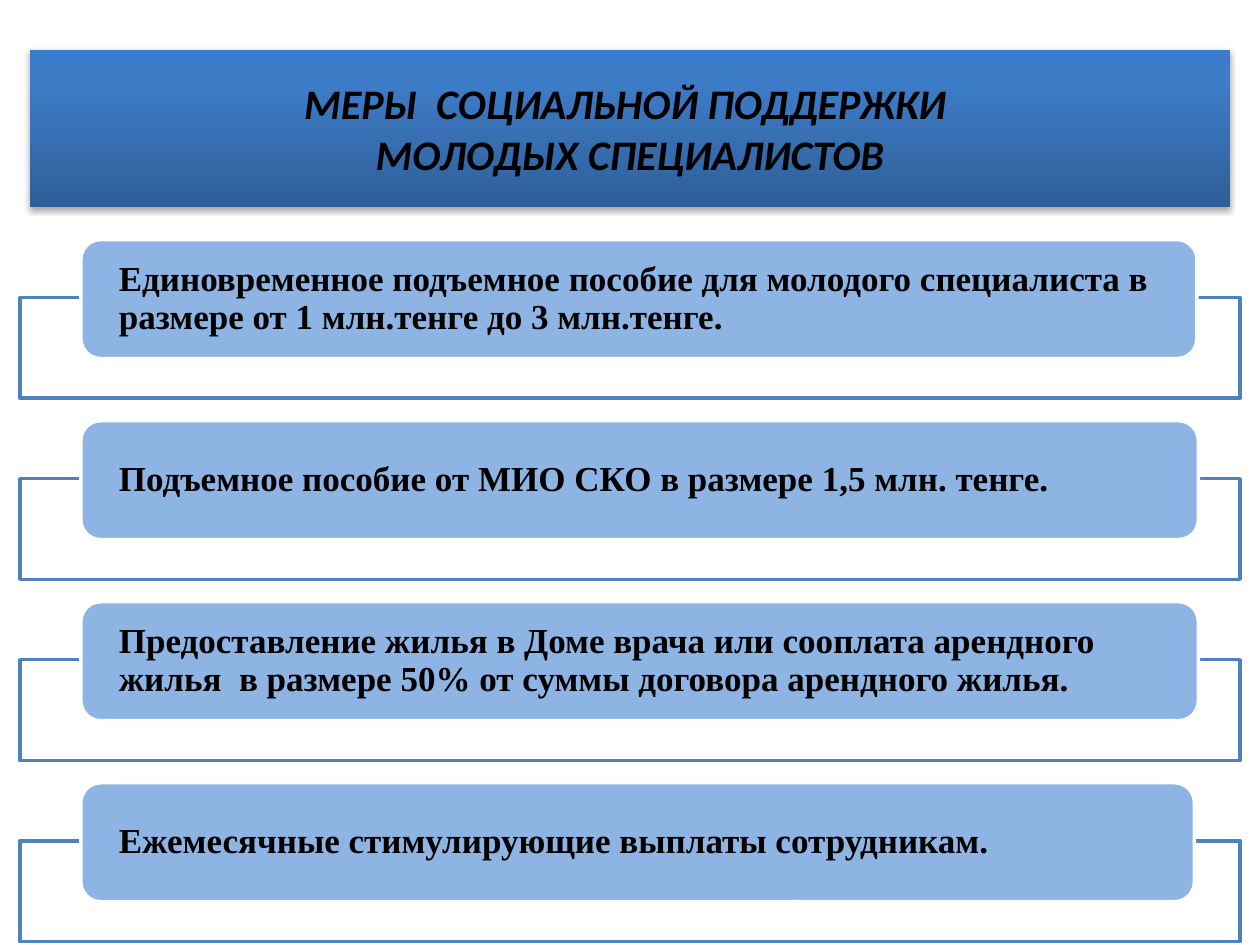
from lxml import etree
from pptx import Presentation
from pptx.dml.color import RGBColor
from pptx.enum.shapes import MSO_SHAPE
from pptx.enum.text import MSO_ANCHOR, PP_ALIGN
from pptx.oxml.ns import qn
from pptx.util import Cm, Pt

RECT, ROUND = MSO_SHAPE.RECTANGLE, MSO_SHAPE.ROUNDED_RECTANGLE
MIDDLE = MSO_ANCHOR.MIDDLE
LEFT, CENTER = PP_ALIGN.LEFT, PP_ALIGN.CENTER

COLORS = {"text": "000000", "white": "FFFFFF", "frame": "4F81BD",
          "card": "8EB4E3", "shadow": "000000"}
BANNER_STOPS = [(0, "2F5F99"), (80, "3D7CC7"), (100, "3A7CCB")]

TITLE = ["МЕРЫ  СОЦИАЛЬНОЙ ПОДДЕРЖКИ ", "МОЛОДЫХ СПЕЦИАЛИСТОВ"]
MEASURES = [
    ("Единовременное подъемное пособие для молодого специалиста "
     "в размере от 1 млн.тенге до 3 млн.тенге.", 22.5),
    ("Подъемное пособие от МИО СКО в размере 1,5 млн. тенге.", 22.53),
    ("Предоставление жилья в Доме врача или сооплата арендного "
     "жилья  в размере 50% от суммы договора арендного жилья.", 22.53),
    ("Ежемесячные стимулирующие выплаты сотрудникам.", 22.45),
]
FIRST_TOP, PITCH, FRAME_DROP = 4.83, 3.65, 1.17


def rgb(name):
    return RGBColor.from_string(COLORS[name])


def add_color(parent, value, alpha=None):
    color = etree.SubElement(parent, qn("a:srgbClr"), val=value)
    if alpha is not None:
        etree.SubElement(color, qn("a:alpha"), val=str(alpha * 1000))


def add_box(shapes, kind, x, y, w, h, fill=None, line=None):
    sp = shapes.add_shape(kind, Cm(x), Cm(y), Cm(w), Cm(h))
    sp.shadow.inherit = False
    if fill:
        sp.fill.solid()
        sp.fill.fore_color.rgb = rgb(fill)
    if line:
        sp.line.color.rgb = rgb(line)
        sp.line.width = Pt(2)
    else:
        sp.line.fill.background()
    return sp


def set_text(sp, lines, size=20, font="Times New Roman", italic=False,
             align=LEFT, spacing=None, inset=None):
    tf = sp.text_frame
    tf.word_wrap = True
    tf.vertical_anchor = MIDDLE
    if inset is not None:
        tf.margin_left = tf.margin_right = Cm(inset)
        tf.margin_top = tf.margin_bottom = 0
    for i, line in enumerate(lines):
        p = tf.paragraphs[0] if i == 0 else tf.add_paragraph()
        p.alignment = align
        p.line_spacing = spacing
        r = p.add_run()
        r.text = line
        r.font.size = Pt(size)
        r.font.name = font
        r.font.bold = True
        r.font.italic = italic
        r.font.color.rgb = rgb("text")


def add_banner(shapes):
    sp = add_box(shapes, RECT, 0.6, 1, 24.2, 3.17)
    sp.fill.gradient()
    sp.fill.gradient_angle = 90
    stops = sp.element.spPr.find(".//" + qn("a:gsLst"))
    for stop in list(stops):
        stops.remove(stop)
    for position, value in BANNER_STOPS:
        add_color(etree.SubElement(stops, qn("a:gs"), pos=str(position * 1000)), value)
    effects = sp.element.spPr.find(qn("a:effectLst"))
    shadow = etree.SubElement(effects, qn("a:outerShdw"), blurRad=str(Pt(3.1)),
                              dist=str(Pt(1.8)), dir="5400000", rotWithShape="0")
    add_color(shadow, COLORS["shadow"], alpha=35)
    set_text(sp, TITLE, size=24, font="Calibri", italic=True, align=CENTER)


def add_measure(shapes, top, text, width):
    frame = add_box(shapes, RECT, 0.4, top + FRAME_DROP, 24.6, 2.03, "white", "frame")
    color = frame.element.spPr.find(qn("a:solidFill")).find(qn("a:srgbClr"))
    etree.SubElement(color, qn("a:alpha"), val="90000")
    card = add_box(shapes, ROUND, 1.63, top, width, 2.4, "card", "white")
    set_text(card, [text], spacing=0.9, inset=0.65)


def main():
    prs = Presentation()
    prs.slide_width, prs.slide_height = Cm(25.4), Cm(19.05)
    s = prs.slides.add_slide(prs.slide_layouts[6])
    add_banner(s.shapes)
    group = s.shapes.add_group_shape()
    for i, (text, width) in enumerate(MEASURES):
        add_measure(group.shapes, FIRST_TOP + i * PITCH, text, width)
    prs.save("out.pptx")


if __name__ == "__main__":
    main()
